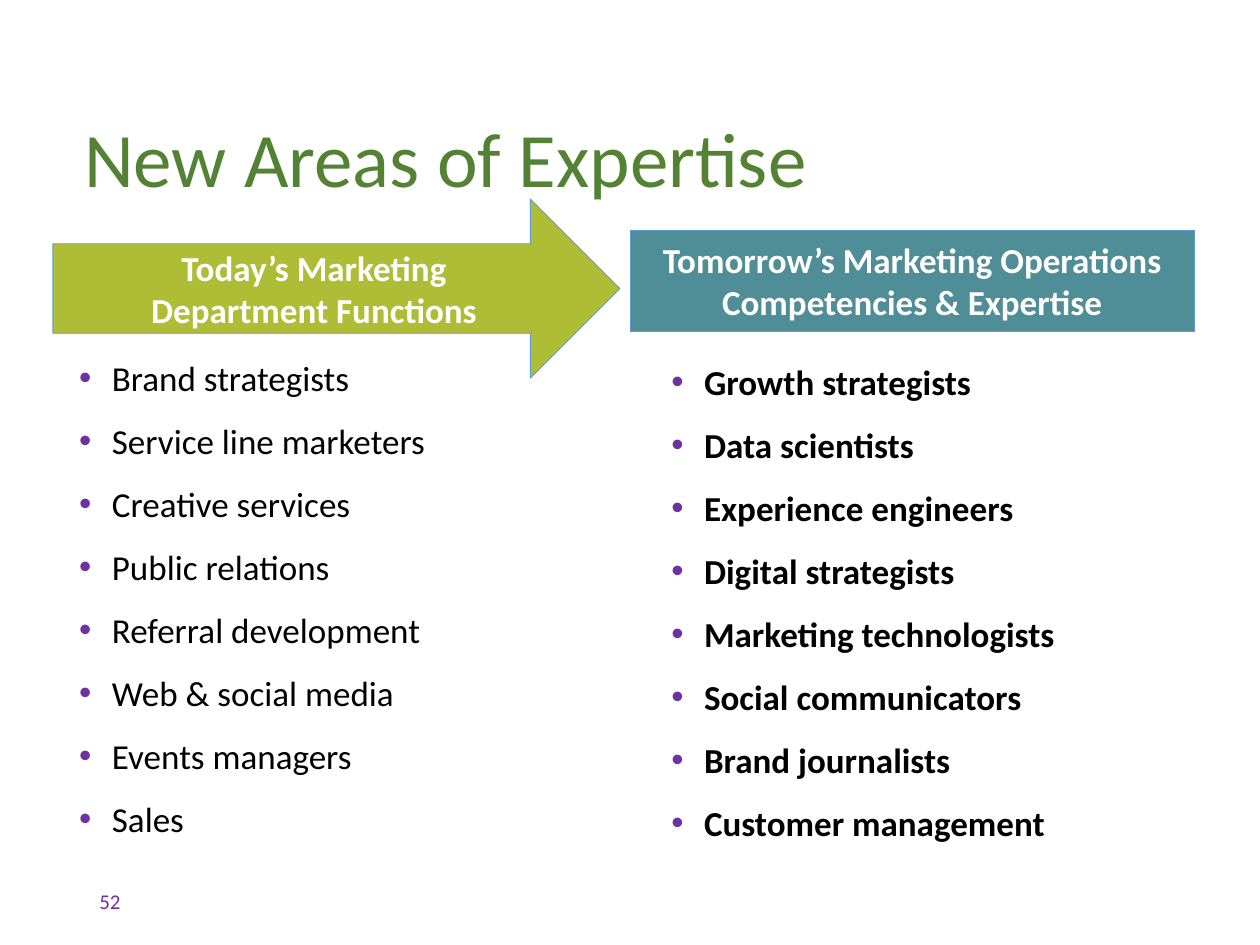
from dataclasses import dataclass

from lxml.etree import SubElement
from pptx import Presentation
from pptx.dml.color import RGBColor
from pptx.enum.shapes import MSO_SHAPE
from pptx.enum.text import MSO_ANCHOR, MSO_AUTO_SIZE, PP_ALIGN
from pptx.oxml.ns import qn
from pptx.slide import Slide
from pptx.text.text import TextFrame
from pptx.util import Inches, Pt

FONT = "Calibri"
GREEN = RGBColor(0x54, 0x82, 0x35)
PURPLE = RGBColor(0x70, 0x30, 0xA0)
LIME = RGBColor(0xAF, 0xBD, 0x36)
TEAL = RGBColor(0x4F, 0x8D, 0x97)
OUTLINE = RGBColor(0x5B, 0x9B, 0xD5)
WHITE = RGBColor(0xFF, 0xFF, 0xFF)
BLACK = RGBColor(0, 0, 0)
BULLET_INDENT = Inches(0.26)


@dataclass(frozen=True)
class Box:
    left: float
    top: float
    width: float
    height: float

    def lengths(self) -> list[Inches]:
        return [Inches(n) for n in (self.left, self.top, self.width, self.height)]


@dataclass(frozen=True)
class Column:
    heading: str
    heading_shape: MSO_SHAPE
    heading_box: Box
    heading_fill: RGBColor
    roles: tuple[str, ...]
    roles_box: Box
    roles_bold: bool


COLUMNS = (
    Column(
        "Today’s Marketing\nDepartment Functions",
        MSO_SHAPE.RIGHT_ARROW, Box(0.42, 1.58, 4.5, 1.42), LIME,
        ("Brand strategists", "Service line marketers", "Creative services",
         "Public relations", "Referral development", "Web & social media",
         "Events managers", "Sales"),
        Box(0.53, 2.78, 3.09, 3.97), False,
    ),
    Column(
        "Tomorrow’s Marketing Operations\nCompetencies & Expertise",
        MSO_SHAPE.RECTANGLE, Box(5, 1.83, 4.48, 0.8), TEAL,
        ("Growth strategists", "Data scientists", "Experience engineers",
         "Digital strategists", "Marketing technologists",
         "Social communicators", "Brand journalists", "Customer management"),
        Box(5.23, 2.81, 3.27, 3.97), True,
    ),
)


def write(frame: TextFrame, text: str, size: float, color: RGBColor,
          bold: bool = False) -> None:
    frame.text = text
    for paragraph in frame.paragraphs:
        for run in paragraph.runs:
            run.font.name = FONT
            run.font.size = Pt(size)
            run.font.bold = bold
            run.font.color.rgb = color


def add_label(slide: Slide, box: Box, text: str, size: float, color: RGBColor,
              anchor: MSO_ANCHOR) -> TextFrame:
    frame = slide.shapes.add_textbox(*box.lengths()).text_frame
    frame.word_wrap = True
    frame.vertical_anchor = anchor
    write(frame, text, size, color)
    return frame


def add_heading(slide: Slide, column: Column) -> None:
    heading = slide.shapes.add_shape(column.heading_shape,
                                     *column.heading_box.lengths())
    heading.shadow.inherit = False
    heading.fill.solid()
    heading.fill.fore_color.rgb = column.heading_fill
    heading.line.color.rgb = OUTLINE
    heading.line.width = Pt(0.5)
    frame = heading.text_frame
    frame.word_wrap = True
    frame.vertical_anchor = MSO_ANCHOR.MIDDLE
    write(frame, column.heading, 20, WHITE, bold=True)
    for paragraph in frame.paragraphs:
        paragraph.alignment = PP_ALIGN.CENTER


def add_roles(slide: Slide, column: Column) -> None:
    frame = slide.shapes.add_textbox(*column.roles_box.lengths()).text_frame
    frame.word_wrap = False
    frame.auto_size = MSO_AUTO_SIZE.SHAPE_TO_FIT_TEXT
    write(frame, "\n".join(column.roles), 20, BLACK, column.roles_bold)
    for paragraph in frame.paragraphs:
        properties = paragraph._p.get_or_add_pPr()
        properties.set("marL", str(BULLET_INDENT))
        properties.set("indent", str(-BULLET_INDENT))
        bullet_color = SubElement(properties, qn("a:buClr"))
        SubElement(bullet_color, qn("a:srgbClr"), val=str(PURPLE))
        SubElement(properties, qn("a:buFont"), typeface="Arial")
        SubElement(properties, qn("a:buChar"), char="•")
        paragraph.space_after = Pt(12)


def main() -> None:
    presentation = Presentation()
    presentation.slide_width = Inches(10)
    presentation.slide_height = Inches(7.5)
    slide = presentation.slides.add_slide(presentation.slide_layouts[6])

    # Title and slide number
    title = add_label(slide, Box(0.57, 0.52, 8.99, 1.15),
                      "New Areas of Expertise", 44, GREEN, MSO_ANCHOR.BOTTOM)
    title.paragraphs[0].line_spacing = 0.9
    add_label(slide, Box(0.69, 6.95, 2.25, 0.4), "52", 12, PURPLE,
              MSO_ANCHOR.MIDDLE)

    # Today and tomorrow: headings above their role lists
    for column in COLUMNS:
        add_heading(slide, column)
        add_roles(slide, column)

    presentation.save("out.pptx")


if __name__ == "__main__":
    main()
